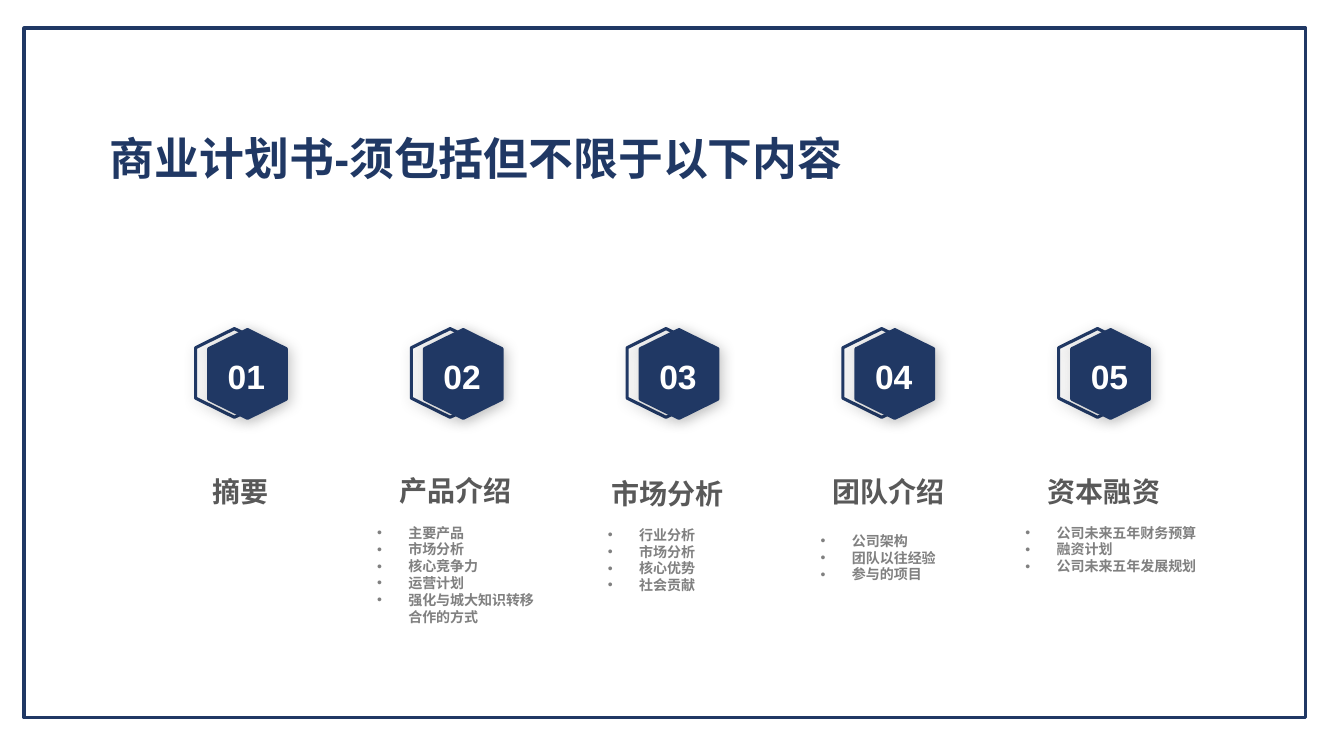
from dataclasses import dataclass

from lxml.etree import SubElement
from pptx import Presentation
from pptx.dml.color import RGBColor
from pptx.enum.text import MSO_ANCHOR, MSO_AUTO_SIZE, PP_ALIGN
from pptx.enum.shapes import MSO_SHAPE
from pptx.oxml.ns import qn
from pptx.util import Inches, Pt


@dataclass(frozen=True)
class Theme:
    navy: RGBColor = RGBColor(0x20, 0x38, 0x64)
    white: RGBColor = RGBColor(0xFF, 0xFF, 0xFF)
    heading: RGBColor = RGBColor(0x59, 0x59, 0x59)
    detail: RGBColor = RGBColor(0x80, 0x80, 0x80)
    latin: str = "Arial"
    cjk: str = "Noto Sans CJK SC"
    title_size: int = 32
    number_size: int = 24
    heading_size: int = 20
    detail_size: int = 10
    frame_line: float = 2.5
    hexagon_line: float = 2.25


THEME = Theme()
TITLE = "商业计划书-须包括但不限于以下内容"
SECTIONS = [
    ("摘要", (1.62, 4.66), None, []),
    ("产品介绍", (3.75, 4.65), (3.64, 5.15, 1.77, 1.28),
     ["主要产品", "市场分析", "核心竞争力", "运营计划", "强化与城大知识转移合作的方式"]),
    ("市场分析", (5.85, 4.68), (5.93, 5.17, 1.77, 0.94),
     ["行业分析", "市场分析", "核心优势", "社会贡献"]),
    ("团队介绍", (8.04, 4.66), (8.04, 5.23, 1.77, 0.77),
     ["公司架构", "团队以往经验", "参与的项目"]),
    ("资本融资", (10.18, 4.66), (10.07, 5.15, 2.15, 0.94),
     ["公司未来五年财务预算", "融资计划", "公司未来五年发展规划"]),
]
BADGE_LEFT, BADGE_TOP, BADGE_PITCH = 1.94, 3.26, 2.14
HEXAGON_W, HEXAGON_H, HEXAGON_SHOULDER = 0.77, 0.88, 0.19


def style_paragraph(p, size, color, font, align):
    p.alignment = align
    p.space_before = Pt(0)
    p.line_spacing = 1.0
    for r in p.runs:
        r.font.size = Pt(size)
        r.font.bold = True
        r.font.name = font
        r.font.color.rgb = color
        SubElement(r.font._element, qn("a:ea"), typeface=THEME.cjk)


def place(s, box):
    s.left, s.top, s.width, s.height = (Inches(v) for v in box)


def set_frame(tf, anchor=MSO_ANCHOR.TOP, wrap=True):
    tf.word_wrap = wrap
    tf.auto_size = MSO_AUTO_SIZE.NONE
    tf.vertical_anchor = anchor
    tf.margin_left = tf.margin_right = Inches(0.1)
    tf.margin_top = tf.margin_bottom = Inches(0.05)


def add_title(s, box):
    sp = s.shapes.title
    place(sp, box)
    tf = sp.text_frame
    set_frame(tf, MSO_ANCHOR.MIDDLE)
    tf.text = TITLE
    style_paragraph(tf.paragraphs[0], THEME.title_size, THEME.navy, THEME.latin, PP_ALIGN.CENTER)


def add_frame(s, box):
    sp = s.shapes.add_shape(MSO_SHAPE.RECTANGLE, *(Inches(v) for v in box))
    sp.shadow.inherit = False
    sp.fill.background()
    sp.line.color.rgb = THEME.navy
    sp.line.width = Pt(THEME.frame_line)


def add_label(s, box, text, size, color, align, wrap=True):
    tf = s.shapes.add_textbox(*(Inches(v) for v in box)).text_frame
    set_frame(tf, wrap=wrap)
    tf.text = text
    style_paragraph(tf.paragraphs[0], size, color, THEME.latin, align)


def add_shadow(sp):
    sp.shadow.inherit = False
    effects = sp._element.spPr.find(qn("a:effectLst"))
    outer = SubElement(effects, qn("a:outerShdw"), blurRad=str(Pt(10)), dist=str(Pt(3)),
                       dir="2700000", algn="tl", rotWithShape="0")
    color = SubElement(outer, qn("a:srgbClr"), val="000000")
    SubElement(color, qn("a:alpha"), val="22000")


def add_hexagon(s, left, top, filled):
    right, mid, bottom = left + HEXAGON_W, left + HEXAGON_W / 2, top + HEXAGON_H
    upper, lower = top + HEXAGON_SHOULDER, bottom - HEXAGON_SHOULDER
    corners = [(mid, bottom), (right, lower), (right, upper),
               (mid, top), (left, upper), (left, lower)]
    points = [(Inches(x), Inches(y)) for x, y in corners]
    builder = s.shapes.build_freeform(*points[0])
    builder.add_line_segments(points[1:], close=True)
    sp = builder.convert_to_shape()
    if filled:
        sp.fill.solid()
        sp.fill.fore_color.rgb = THEME.navy
    else:
        sp.fill.background()
    sp.line.color.rgb = THEME.navy
    sp.line.width = Pt(THEME.hexagon_line)
    SubElement(sp.line._get_or_add_ln(), qn("a:round"))
    add_shadow(sp)


def add_badge(s, left, top, number):
    add_hexagon(s, left, top, filled=False)
    add_hexagon(s, left + 0.13, top + 0.01, filled=True)
    add_label(s, (left + 0.22, top + 0.22, 0.58, 0.5), f"{number:02d}",
              THEME.number_size, THEME.white, PP_ALIGN.LEFT, wrap=False)


def add_details(sp, box, items):
    place(sp, box)
    tf = sp.text_frame
    set_frame(tf)
    tf.text = "\n".join(items)
    for p in tf.paragraphs:
        pPr = p._p.get_or_add_pPr()
        pPr.set("marL", str(Inches(0.31)))
        pPr.set("indent", str(-Inches(0.31)))
        SubElement(pPr, qn("a:buFont"), typeface=THEME.latin)
        SubElement(pPr, qn("a:buChar"), char="•")
        style_paragraph(p, THEME.detail_size, THEME.detail, THEME.cjk, PP_ALIGN.LEFT)


def add_contents_slide(prs):
    s = prs.slides.add_slide(prs.slide_layouts.get_by_name("Comparison"))
    bodies = iter([sp for sp in s.placeholders if sp.placeholder_format.idx > 0])
    add_title(s, (0.3, 1.1, 8.85, 0.92))
    add_frame(s, (0.24, 0.28, 12.71, 6.84))
    for i, (heading, corner, box, items) in enumerate(SECTIONS):
        add_badge(s, BADGE_LEFT + i * BADGE_PITCH, BADGE_TOP, i + 1)
        add_label(s, (*corner, 1.54, 0.44), heading,
                  THEME.heading_size, THEME.heading, PP_ALIGN.CENTER)
        if items:
            add_details(next(bodies), box, items)


def main():
    prs = Presentation()
    prs.slide_width, prs.slide_height = Inches(13.33), Inches(7.5)
    add_contents_slide(prs)
    prs.save("out.pptx")


if __name__ == "__main__":
    main()
